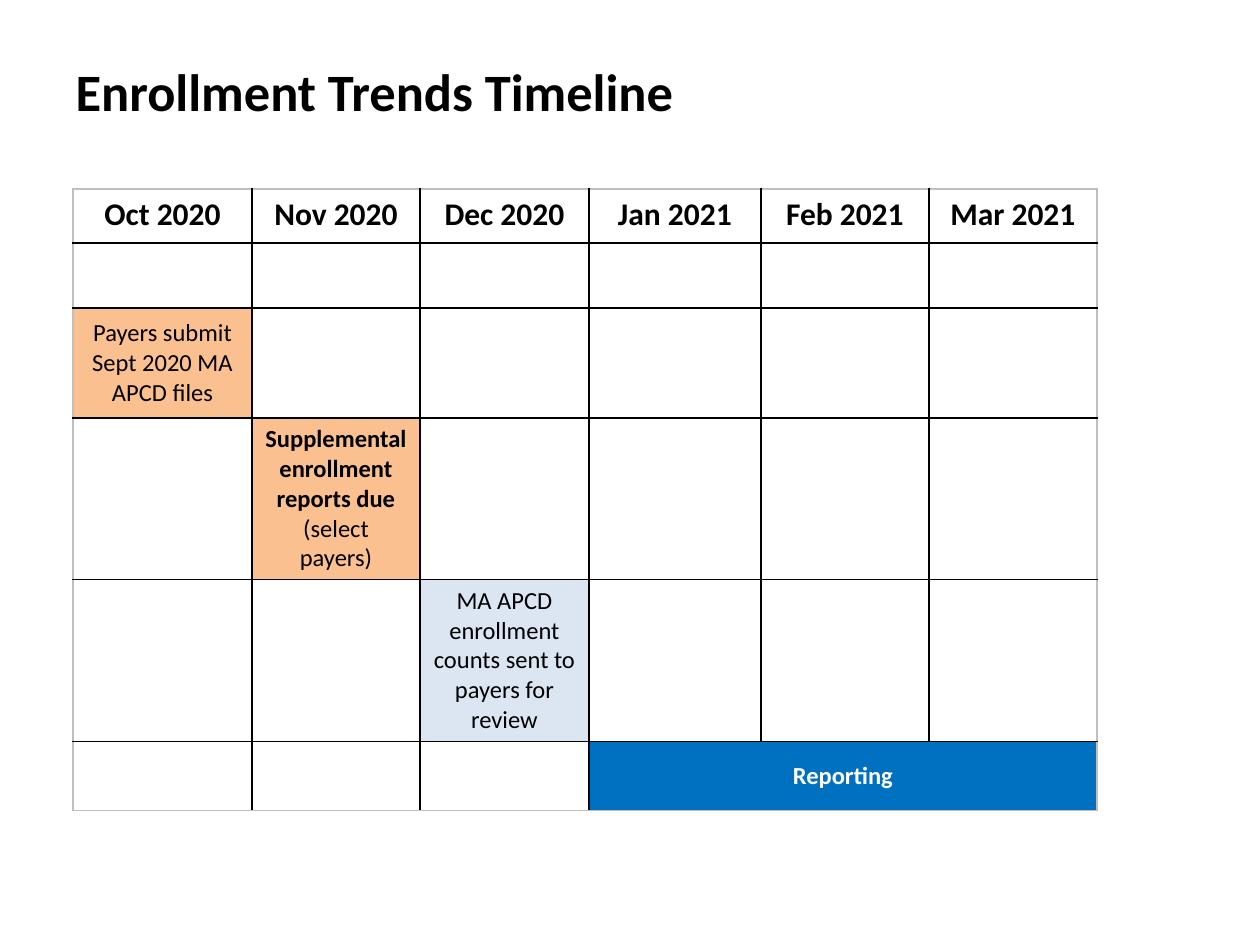
import pptx
import pptx.util
import pptx.dml.color
import pptx.enum.text
import pptx.oxml.ns
import lxml.etree
from dataclasses import dataclass


@dataclass(frozen=True)
class Theme:
    font: str = "Calibri"
    title: int = 30
    header: int = 18
    body: int = 14
    ink: str = "000000"
    white: str = "FFFFFF"
    edge: str = "BFBFBF"
    payer: str = "FAC090"
    review: str = "DCE6F2"
    report: str = "0070C0"


T = Theme()
PX = 914400 // 126

TITLE = "Enrollment Trends Timeline"
MONTHS = ["Oct 2020", "Nov 2020", "Dec 2020", "Jan 2021", "Feb 2021", "Mar 2021"]
STEPS = [
    dict(row=2, col=0, span=1, fill=T.payer, ink=T.ink,
         runs=[("Payers submit Sept 2020 MA APCD files", False)]),
    dict(row=3, col=1, span=1, fill=T.payer, ink=T.ink,
         runs=[("Supplemental enrollment reports due ", True), ("(select payers)", False)]),
    dict(row=4, col=2, span=1, fill=T.review, ink=T.ink,
         runs=[("MA APCD enrollment counts sent to payers for review", False)]),
    dict(row=5, col=3, span=3, fill=T.report, ink=T.white,
         runs=[("Reporting", True)]),
]
TITLE_BOX = (63, 53, 1071, 77)
TABLE_AT = (73, 189)
COLS = [179, 168, 169, 172, 168, 168]
ROWS = [54, 65, 110, 160, 160, 69]


def px(n):
    return pptx.util.Emu(n * PX)


def rgb(value):
    return pptx.dml.color.RGBColor.from_string(value)


def write(tf, runs, size, color, align):
    p = tf.paragraphs[0]
    p.alignment = align
    for text, bold in runs:
        r = p.add_run()
        r.text = text
        r.font.name = T.font
        r.font.size = pptx.util.Pt(size)
        r.font.bold = bold
        r.font.color.rgb = rgb(color)


def border(cell, side, color):
    qn = pptx.oxml.ns.qn
    tc_pr = cell._tc.get_or_add_tcPr()
    ln = lxml.etree.SubElement(tc_pr, qn(f"a:ln{side}"), w=str(pptx.util.Pt(1)))
    fill = lxml.etree.SubElement(ln, qn("a:solidFill"))
    lxml.etree.SubElement(fill, qn("a:srgbClr"), val=color)


def add_title(s):
    sp = s.shapes.title
    sp.left, sp.top, sp.width, sp.height = map(px, TITLE_BOX)
    tf = sp.text_frame
    tf.word_wrap = True
    tf.vertical_anchor = pptx.enum.text.MSO_ANCHOR.TOP
    write(tf, [(TITLE, True)], T.title, T.ink, pptx.enum.text.PP_ALIGN.LEFT)


def add_timeline(s):
    size = (sum(COLS), sum(ROWS))
    table = s.shapes.add_table(len(ROWS), len(COLS), *map(px, TABLE_AT + size)).table
    table.first_row = table.horz_banding = False
    for column, width in zip(table.columns, COLS):
        column.width = px(width)
    for row, height in zip(table.rows, ROWS):
        row.height = px(height)

    spans = {(step["row"], step["col"]): step["span"] for step in STEPS}
    for i in range(len(ROWS)):
        for j in range(len(COLS)):
            cell = table.cell(i, j)
            last = j + spans.get((i, j), 1) == len(COLS)
            outer = {"L": j == 0, "R": last, "T": i == 0, "B": i == len(ROWS) - 1}
            for side, is_outer in outer.items():
                border(cell, side, T.edge if is_outer else T.ink)
            cell.fill.background()

    center = pptx.enum.text.PP_ALIGN.CENTER
    for j, month in enumerate(MONTHS):
        write(table.cell(0, j).text_frame, [(month, True)], T.header, T.ink, center)
    for step in STEPS:
        i, j = step["row"], step["col"]
        cell = table.cell(i, j)
        if step["span"] > 1:
            cell.merge(table.cell(i, j + step["span"] - 1))
        cell.fill.solid()
        cell.fill.fore_color.rgb = rgb(step["fill"])
        cell.vertical_anchor = pptx.enum.text.MSO_ANCHOR.MIDDLE
        write(cell.text_frame, step["runs"], T.body, step["ink"], center)


def main():
    prs = pptx.Presentation()
    prs.slide_width, prs.slide_height = px(1260), px(945)
    s = prs.slides.add_slide(prs.slide_layouts[5])
    add_title(s)
    add_timeline(s)
    prs.save("out.pptx")


if __name__ == "__main__":
    main()
